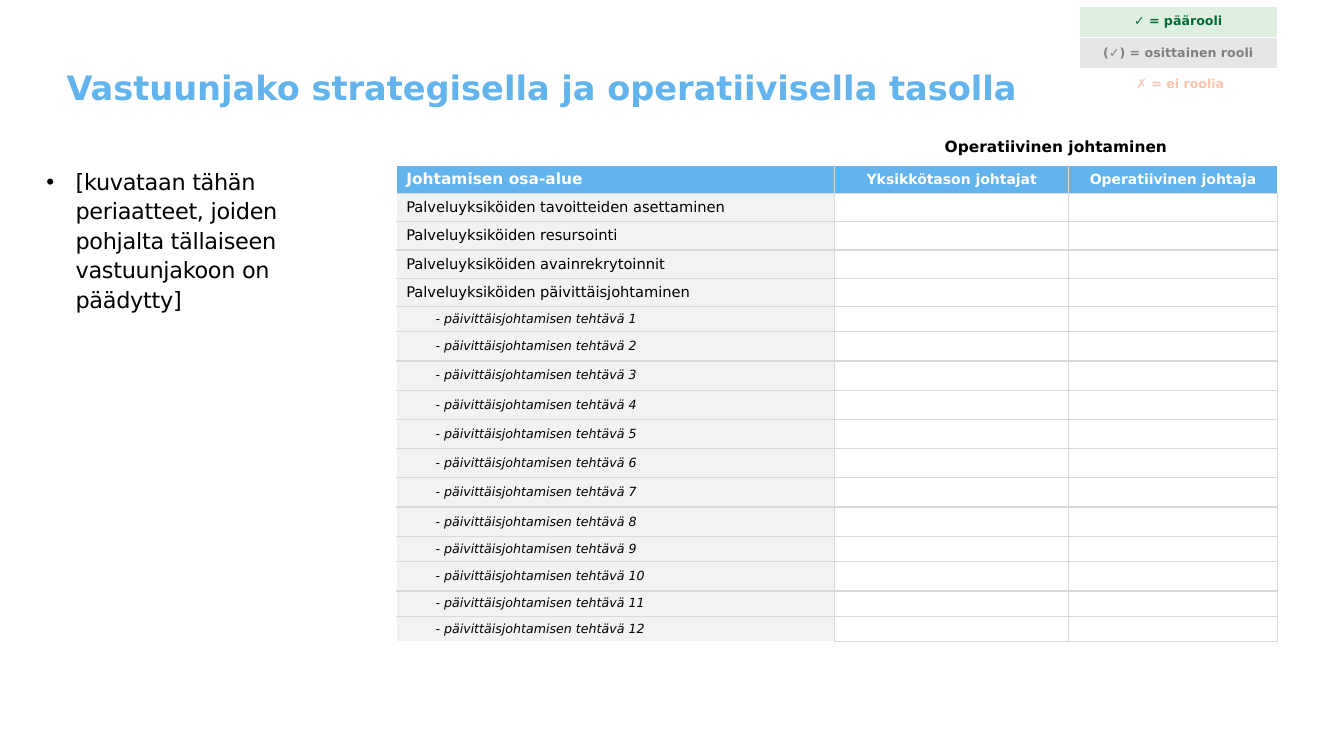
from lxml.etree import SubElement
from pptx import Presentation
from pptx.dml.color import RGBColor
from pptx.enum.text import MSO_ANCHOR, MSO_AUTO_SIZE, PP_ALIGN
from pptx.oxml.ns import qn
from pptx.util import Inches, Pt

BLUE, WHITE, BLACK = "63B4EC", "FFFFFF", "000000"
RULE, LABEL_FILL = "D9D9D9", "F2F2F2"
CELL_INSETS = (0.1, 0.05, 0.1, 0.05)
TASK_INSETS = (0.39, 0.05, 0.1, 0.05)
LEGEND_INSETS = (0.05,) * 4

AREAS = ["tavoitteiden asettaminen", "resursointi", "avainrekrytoinnit", "päivittäisjohtaminen"]
TASKS = range(1, 13)
UPRIGHT_DASH = {3, 4, 5, 6, 7, 8, 10}
TALL_TASKS = UPRIGHT_DASH | {2}
LEGEND = [
    ("✓ = päärooli", "046A38", "DFEFDF"),
    ("(✓) = osittainen rooli", "808080", "E7E6E6"),
    (" ✗ = ei roolia", "FAC4AE", None),
]


def rgb(value):
    return RGBColor.from_string(value)


class SlideBuilder:
    font = "DejaVu Sans"

    def __init__(self, prs):
        self.s = prs.slides.add_slide(prs.slide_layouts[1])

    def run(self, p, text, size, color=BLACK, bold=False, italic=False):
        r = p.add_run()
        r.text = text
        f = r.font
        f.name, f.size, f.bold, f.italic = self.font, Pt(size), bold, italic
        f.color.rgb = rgb(color)
        return r

    def placeholder(self, idx, left, top, width, height):
        """Move a placeholder, clear its insets and return its first paragraph."""
        sp = self.s.placeholders[idx]
        sp.left, sp.top = Inches(left), Inches(top)
        sp.width, sp.height = Inches(width), Inches(height)
        tf = sp.text_frame
        tf.margin_left = tf.margin_top = tf.margin_right = tf.margin_bottom = 0
        tf.word_wrap, tf.auto_size = True, MSO_AUTO_SIZE.NONE
        tf.vertical_anchor = MSO_ANCHOR.TOP
        p = tf.paragraphs[0]
        p.alignment = PP_ALIGN.LEFT
        return p

    def title(self, text, *box):
        self.run(self.placeholder(0, *box), text, 24, BLUE, bold=True)

    def bullet(self, text, *box):
        p = self.placeholder(1, *box)
        p.line_spacing, p.space_before = 1.1, Pt(0)
        pPr = p._p.get_or_add_pPr()
        pPr.set("marL", str(Inches(0.29)))
        pPr.set("indent", str(-Inches(0.29)))
        SubElement(pPr, qn("a:buChar"), char="•")
        r = self.run(p, text, 16)
        r._r.get_or_add_rPr().set("spc", "-20")

    def table(self, left, top, widths, heights):
        frame = self.s.shapes.add_table(
            len(heights), len(widths), Inches(left), Inches(top),
            Inches(sum(widths)), Inches(sum(heights)))
        table = frame.table
        table.first_row = table.horz_banding = False
        for column, width in zip(table.columns, widths):
            column.width = Inches(width)
        for row, height in zip(table.rows, heights):
            row.height = Inches(height)
        return table

    def cell(self, cell, fill, borders, insets=CELL_INSETS, centred=False,
             anchor=MSO_ANCHOR.MIDDLE):
        """Format a cell; borders are (colour, points) for left, right, top, bottom."""
        tcPr = cell._tc.get_or_add_tcPr()
        for side, (color, width) in zip("LRTB", borders):
            ln = SubElement(tcPr, qn(f"a:ln{side}"), w=str(Pt(width)))
            SubElement(SubElement(ln, qn("a:solidFill")), qn("a:srgbClr"), val=color)
        if fill:
            cell.fill.solid()
            cell.fill.fore_color.rgb = rgb(fill)
        else:
            cell.fill.background()
        cell.margin_left, cell.margin_top, cell.margin_right, cell.margin_bottom = map(Inches, insets)
        cell.vertical_anchor = anchor
        p = cell.text_frame.paragraphs[0]
        p.alignment = PP_ALIGN.CENTER if centred else PP_ALIGN.LEFT
        return p

    def empty_cell(self, cell, fill, borders):
        """Keep the blank cell's line low enough for its row."""
        p = self.cell(cell, fill, borders)
        SubElement(p._p, qn("a:endParaRPr"), sz="900")

    def responsibilities(self):
        task_heights = [0.29 if n in TALL_TASKS else 0.25 for n in TASKS]
        heights = [0.32] + [0.28] * (1 + len(AREAS)) + task_heights
        table = self.table(3.93, 1.32, [4.35, 2.32, 2.07], heights)
        white, thin, grey = (WHITE, 1), (WHITE, 0.5), (RULE, 1)

        group_borders = (white, white, white, thin)
        self.empty_cell(table.cell(0, 0), None, group_borders)
        table.cell(0, 1).merge(table.cell(0, 2))
        p = self.cell(table.cell(0, 1), None, group_borders, centred=True, anchor=MSO_ANCHOR.TOP)
        self.run(p, "Operatiivinen johtaminen", 11, bold=True)
        self.cell(table.cell(0, 2), None, group_borders)

        headings = [("Johtamisen osa-alue", 11, thin, grey),
                    ("Yksikkötason johtajat", 10, grey, grey),
                    ("Operatiivinen johtaja", 10, grey, thin)]
        for col, (text, size, left, right) in enumerate(headings):
            p = self.cell(table.cell(1, col), BLUE, (left, right, thin, grey), centred=col > 0)
            self.run(p, text, size, WHITE, bold=True)

        label_borders = (white, grey, grey, grey)
        for row, area in enumerate(AREAS, 2):
            p = self.cell(table.cell(row, 0), LABEL_FILL, label_borders)
            self.run(p, f"Palveluyksiköiden {area}", 10.5)

        for row, n in enumerate(TASKS, 2 + len(AREAS)):
            bottom = white if n == TASKS[-1] else grey
            p = self.cell(table.cell(row, 0), LABEL_FILL, (white, grey, grey, bottom), TASK_INSETS)
            self.run(p, "- ", 9, italic=n not in UPRIGHT_DASH)
            self.run(p, f"päivittäisjohtamisen tehtävä {n}", 9, italic=True)

        for row in range(2, len(heights)):
            for col in (1, 2):
                self.empty_cell(table.cell(row, col), None, (grey,) * 4)

    def legend(self):
        table = self.table(10.7, 0.06, [1.97], [0.31] * len(LEGEND))
        for row, (text, color, fill) in enumerate(LEGEND):
            p = self.cell(table.cell(row, 0), fill, ((WHITE, 0.5),) * 4, LEGEND_INSETS, centred=True)
            self.run(p, text, 9, color, bold=True)


def main():
    prs = Presentation()
    prs.slide_width, prs.slide_height = Inches(13.33), Inches(7.5)
    slide = SlideBuilder(prs)
    slide.title("Vastuunjako strategisella ja operatiivisella tasolla", 0.66, 0.66, 12.01, 0.88)
    slide.responsibilities()
    slide.legend()
    slide.bullet("[kuvataan tähän periaatteet, joiden pohjalta tällaiseen vastuunjakoon on päädytty]",
                 0.46, 1.64, 2.98, 4.7)
    prs.save("out.pptx")


if __name__ == "__main__":
    main()
